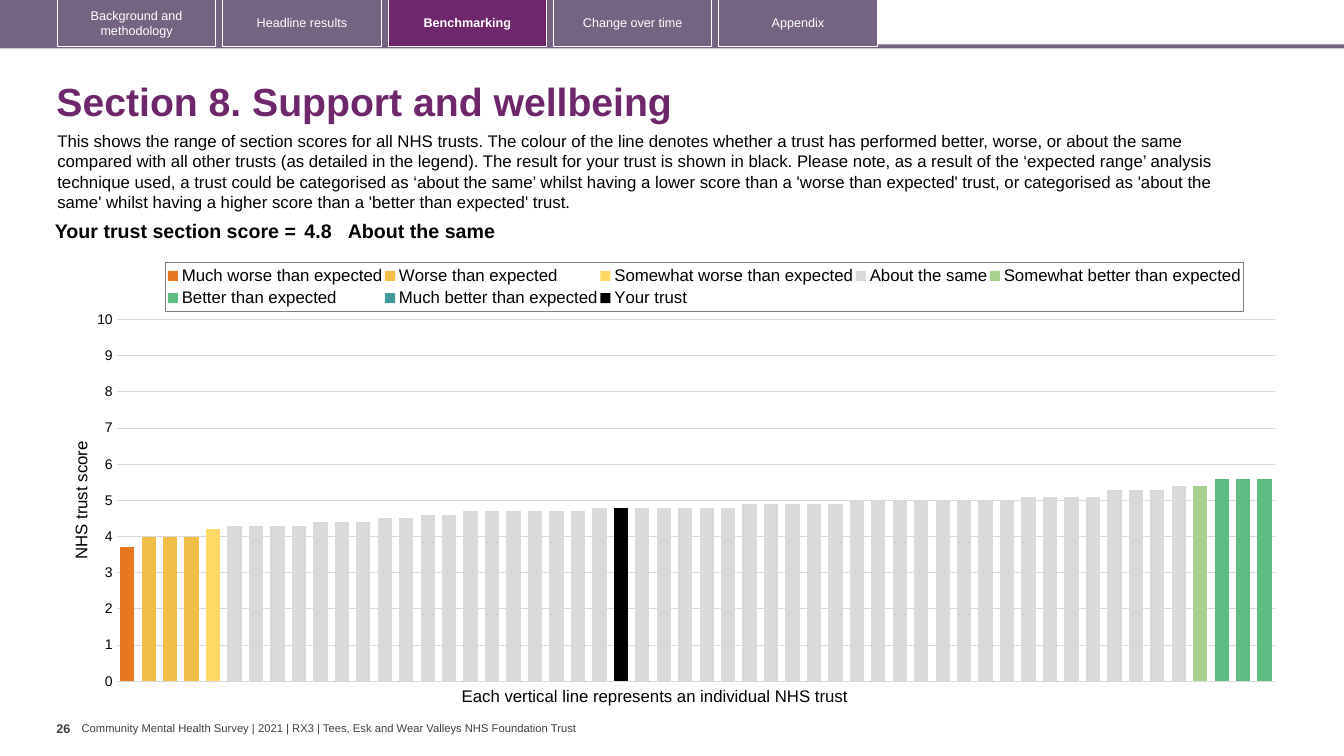
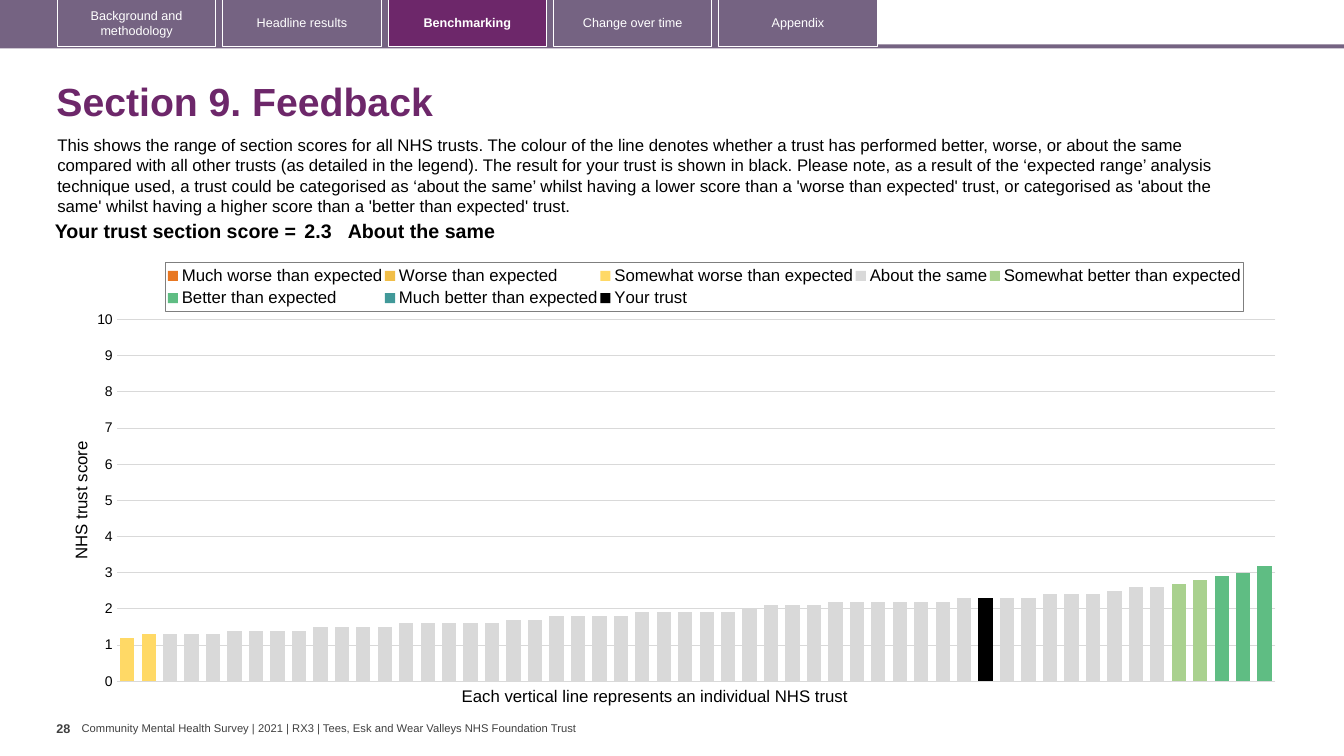
from copy import deepcopy
from dataclasses import dataclass

from lxml import etree
from pptx import Presentation
from pptx import util as u
from pptx.chart.data import CategoryChartData
from pptx.dml.color import RGBColor
from pptx.enum import chart as ch
from pptx.enum import shapes, text
from pptx.oxml import parse_xml
from pptx.oxml.ns import nsdecls, qn

FONT = "Arial"
PLUM, MAUVE, WHITE, BLACK = "6D276A", "756382", "FFFFFF", "000000"
FOOTER_GREY, GRID_GREY, FRAME_GREY = "404040", "D9D9D9", "7F7F7F"

TABS = ["Background and methodology", "Headline results", "Benchmarking",
        "Change over time", "Appendix"]
ACTIVE_TAB = "Benchmarking"
FOOTER = ("Community Mental Health Survey | 2021 | RX3 | "
          "Tees, Esk and Wear Valleys NHS Foundation Trust")
INTRO = (
    "This shows the range of section scores for all NHS trusts. The colour of the line "
    "denotes whether a trust has performed better, worse, or about the same compared with "
    "all other trusts (as detailed in the legend). The result for your trust is shown in "
    "black. Please note, as a result of the ‘expected range’ analysis technique used, a "
    "trust could be categorised as ‘about the same’ whilst having a lower score than a "
    "'worse than expected' trust, or categorised as 'about the same' whilst having a higher "
    "score than a 'better than expected' trust.")
BAND_COLOURS = {
    "Much worse than expected": "E87722",
    "Worse than expected": "F1BE48",
    "Somewhat worse than expected": "FFD966",
    "About the same": "D9D9D9",
    "Somewhat better than expected": "A9D18E",
    "Better than expected": "5FBD83",
    "Much better than expected": "419999",
}
YOUR_TRUST = "Your trust"


@dataclass
class Area:
    left: float
    top: float
    width: float
    height: float

    def lengths(self) -> tuple:
        return tuple(u.Inches(n) for n in (self.left, self.top, self.width, self.height))


@dataclass
class Section:
    number: str
    title: str
    intro_top: float
    score: float
    verdict: str
    rank: int      # place of your trust, counted from 1
    bands: dict    # band name -> {score: number of trusts}, lowest first


SECTIONS = [
    Section("26", "Section 8. Support and wellbeing", 1.25, 4.8, "About the same", 24, {
        "Much worse than expected": {3.7: 1},
        "Worse than expected": {4: 3},
        "Somewhat worse than expected": {4.2: 1},
        "About the same": {4.3: 4, 4.4: 3, 4.5: 2, 4.6: 2, 4.7: 6, 4.8: 7, 4.9: 5,
                           5: 8, 5.1: 4, 5.3: 3, 5.4: 1},
        "Somewhat better than expected": {5.4: 1},
        "Better than expected": {5.6: 3},
    }),
    Section("28", "Section 9. Feedback", 1.29, 2.3, "About the same", 41, {
        "Somewhat worse than expected": {1.2: 1, 1.3: 1},
        "About the same": {1.3: 3, 1.4: 4, 1.5: 4, 1.6: 5, 1.7: 2, 1.8: 4, 1.9: 5, 2: 1,
                           2.1: 3, 2.2: 6, 2.3: 4, 2.4: 3, 2.5: 1, 2.6: 2},
        "Somewhat better than expected": {2.7: 1, 2.8: 1},
        "Better than expected": {2.9: 1, 3: 1, 3.2: 1},
    }),
]


def rgb(colour: str) -> RGBColor:
    return RGBColor.from_string(colour)


def style_font(font, size: float, colour: str, bold: bool = False) -> None:
    font.name, font.size, font.bold = FONT, u.Pt(size), bold
    font.color.rgb = rgb(colour)


def write(frame, words: str, size: float, colour: str, bold: bool = False,
          align=text.PP_ALIGN.LEFT):
    para = frame.paragraphs[0]
    para.alignment = align
    span = para.add_run()
    span.text = words
    style_font(span.font, size, colour, bold)
    return para


def add_text(page, area: Area, words: str, size: float, colour: str, bold: bool = False,
             wrap: bool = False, insets: tuple = (0.1, 0.05),
             anchor=text.MSO_ANCHOR.TOP):
    box = page.shapes.add_textbox(*area.lengths())
    frame = box.text_frame
    frame.word_wrap = wrap
    frame.vertical_anchor = anchor
    frame.margin_left = frame.margin_right = u.Inches(insets[0])
    frame.margin_top = frame.margin_bottom = u.Inches(insets[1])
    write(frame, words, size, colour, bold)
    return box


def add_block(page, area: Area, fill: str = "", line: str = ""):
    block = page.shapes.add_shape(shapes.MSO_SHAPE.RECTANGLE, *area.lengths())
    block.shadow.inherit = False
    if fill:
        block.fill.solid()
        block.fill.fore_color.rgb = rgb(fill)
    else:
        block.fill.background()
    if line:
        block.line.color.rgb = rgb(line)
        block.line.width = u.Pt(0.75)
    else:
        block.line.fill.background()
    return block


def build_layout(page) -> None:
    """Draw the footer and navigation once and keep them on the layout."""
    layout = page.slide_layout
    for holder in list(layout.placeholders)[1:]:
        holder.element.getparent().remove(holder.element)
    parts = [
        add_text(page, Area(0.81, 7.16, 5, 0.13), FOOTER, 8, FOOTER_GREY,
                 insets=(0, 0), anchor=text.MSO_ANCHOR.MIDDLE),
        add_block(page, Area(-0.03, 0.44, 13.36, 0.04), MAUVE),
        add_block(page, Area(-0.03, 0, 8.73, 0.47), MAUVE),
    ]
    for place, label in enumerate(TABS):
        active = label == ACTIVE_TAB
        tab = add_block(page, Area(0.57 + 1.64 * place, -0.01, 1.57, 0.47),
                        PLUM if active else "", WHITE)
        tab.text_frame.word_wrap = True
        tab.text_frame.vertical_anchor = text.MSO_ANCHOR.MIDDLE
        write(tab.text_frame, label, 9, WHITE, active, text.PP_ALIGN.CENTER)
        parts.append(tab)
    for part in parts:
        layout.shapes.element.append(part.element)


def add_title(page, words: str) -> None:
    title = page.shapes.title
    title.left, title.top, title.width, title.height = Area(0.46, 0.67, 12.49, 0.72).lengths()
    title.text_frame.auto_size = text.MSO_AUTO_SIZE.NONE
    title.text_frame.vertical_anchor = text.MSO_ANCHOR.MIDDLE
    write(title.text_frame, words, 28, PLUM, True).line_spacing = 0.9


def add_score_table(page, section: Section) -> None:
    table = page.shapes.add_table(1, 3, *Area(0.35, 2.15, 11.69, 0.31).lengths()).table
    table.first_row = table.horz_banding = False
    right, left = text.PP_ALIGN.RIGHT, text.PP_ALIGN.LEFT
    columns = [("Your trust section score =", 2.63, 0.04, right),
               (str(section.score), 0.47, 0.04, left),
               (section.verdict, 8.59, 0, left)]
    for place, (words, width, inset, align) in enumerate(columns):
        table.columns[place].width = u.Inches(width)
        cell = table.cell(0, place)
        cell.fill.background()
        cell.margin_left = cell.margin_right = u.Inches(inset)
        cell.margin_top = cell.margin_bottom = u.Inches(0.04)
        write(cell.text_frame, words, 14, BLACK, True, align)


def manual_layout(area: Area, target: str = "") -> etree._Element:
    """Chart layout, with lengths as shares of the chart area."""
    inner = f'<c:layoutTarget val="{target}"/>' if target else ""
    sizes = "".join(f'<c:{tag} val="{size}"/>' for tag, size in
                    zip("xywh", (area.left, area.top, area.width, area.height)))
    return parse_xml(f'<c:layout {nsdecls("c")}><c:manualLayout>{inner}<c:xMode val="edge"/>'
                     f'<c:yMode val="edge"/>{sizes}</c:manualLayout></c:layout>')


def drop(parent, *tags: str) -> None:
    for tag in tags:
        for child in parent.findall(qn(tag)):
            parent.remove(child)


def move_last_series_to_second_axis(plot_area) -> None:
    bars = plot_area.find(qn("c:barChart"))
    categories, values = plot_area.find(qn("c:catAx")), plot_area.find(qn("c:valAx"))
    bars2, categories2, values2 = (deepcopy(part) for part in (bars, categories, values))
    for series in bars2.findall(qn("c:ser"))[:-1]:
        bars2.remove(series)
    bars.remove(bars.findall(qn("c:ser"))[-1])
    bars.addnext(bars2)
    values.addnext(values2)
    values2.addnext(categories2)

    ids = ("50010", "50020")
    for axis_id, new in zip(bars2.findall(qn("c:axId")), ids):
        axis_id.set("val", new)
    for axis, own, other in ((categories2, *ids), (values2, *ids[::-1])):
        axis.find(qn("c:axId")).set("val", own)
        axis.find(qn("c:crossAx")).set("val", other)
    drop(values2, "c:majorGridlines", "c:title")
    for tag, setting in (("c:axPos", "r"), ("c:majorTickMark", "out"),
                         ("c:tickLblPos", "none"), ("c:crosses", "max")):
        values2.find(qn(tag)).set("val", setting)


def chart_data(section: Section) -> CategoryChartData:
    ranked = [(band, score) for band, counts in section.bands.items()
              for score, count in counts.items() for _ in range(count)]
    places = range(1, len(ranked) + 1)
    data = CategoryChartData()
    data.categories = [str(place) for place in places]
    for name in BAND_COLOURS:
        data.add_series(name, [score if band == name else None for band, score in ranked])
    data.add_series(YOUR_TRUST, [section.score if place == section.rank else None
                                 for place in places])
    return data


def add_score_chart(page, section: Section) -> None:
    chart = page.shapes.add_chart(ch.XL_CHART_TYPE.COLUMN_CLUSTERED,
                                  *Area(0.67, 2.47, 12.15, 4.44).lengths(),
                                  chart_data(section)).chart
    style_font(chart.font, 10, BLACK)
    chart.has_title = False

    # Bars
    plot = chart.plots[0]
    plot.gap_width, plot.overlap, plot.vary_by_categories = 50, 100, False
    for series, colour in zip(plot.series, [*BAND_COLOURS.values(), BLACK]):
        series.format.fill.solid()
        series.format.fill.fore_color.rgb = rgb(colour)

    # Axes
    chart.category_axis.visible = False
    axis = chart.value_axis
    axis.minimum_scale, axis.maximum_scale, axis.major_unit = 0, 10, 1
    axis.major_tick_mark = axis.minor_tick_mark = ch.XL_TICK_MARK.NONE
    axis.format.line.fill.background()
    axis.major_gridlines.format.line.color.rgb = rgb(GRID_GREY)
    axis.major_gridlines.format.line.width = u.Pt(0.75)
    style_font(axis.tick_labels.font, 10, BLACK)
    write(axis.axis_title.text_frame, "NHS trust score", 12, BLACK,
          align=text.PP_ALIGN.CENTER)

    # Legend
    chart.has_legend = True
    chart.legend.position = ch.XL_LEGEND_POSITION.TOP
    chart.legend.include_in_layout = False
    style_font(chart.legend.font, 12, BLACK)
    legend = chart.element.find(".//" + qn("c:legend"))
    drop(legend, "c:layout")
    legend.find(qn("c:legendPos")).addnext(manual_layout(Area(0.08, 0.03, 0.88, 0.11)))
    legend.find(qn("c:overlay")).addnext(parse_xml(
        f'<c:spPr {nsdecls("c", "a")}><a:ln w="9525"><a:solidFill>'
        f'<a:srgbClr val="{FRAME_GREY}"/></a:solidFill></a:ln></c:spPr>'))

    # Plot area and second axis
    plot_area = chart.element.find(".//" + qn("c:plotArea"))
    drop(plot_area, "c:layout")
    plot_area.insert(0, manual_layout(Area(0.04, 0.158, 0.946, 0.808), "inner"))
    move_last_series_to_second_axis(plot_area)


def add_section(page, section: Section) -> None:
    add_title(page, section.title)
    add_text(page, Area(0.56, 7.1, 0.25, 0.4), section.number, 9, FOOTER_GREY, True,
             insets=(0, 0.05))
    add_text(page, Area(0.47, section.intro_top, 12.13, 0.91), INTRO, 12, BLACK, wrap=True)
    add_text(page, Area(4.48, 6.75, 4.11, 0.3),
             "Each vertical line represents an individual NHS trust", 12, BLACK)
    add_score_chart(page, section)
    add_score_table(page, section)


def main() -> None:
    deck = Presentation()
    deck.slide_width, deck.slide_height = u.Inches(13.33), u.Inches(7.5)
    title_only = deck.slide_layouts[5]
    pages = [deck.slides.add_slide(title_only) for _ in SECTIONS]
    build_layout(pages[0])
    for page, section in zip(pages, SECTIONS):
        add_section(page, section)
    deck.save("out.pptx")


if __name__ == "__main__":
    main()
